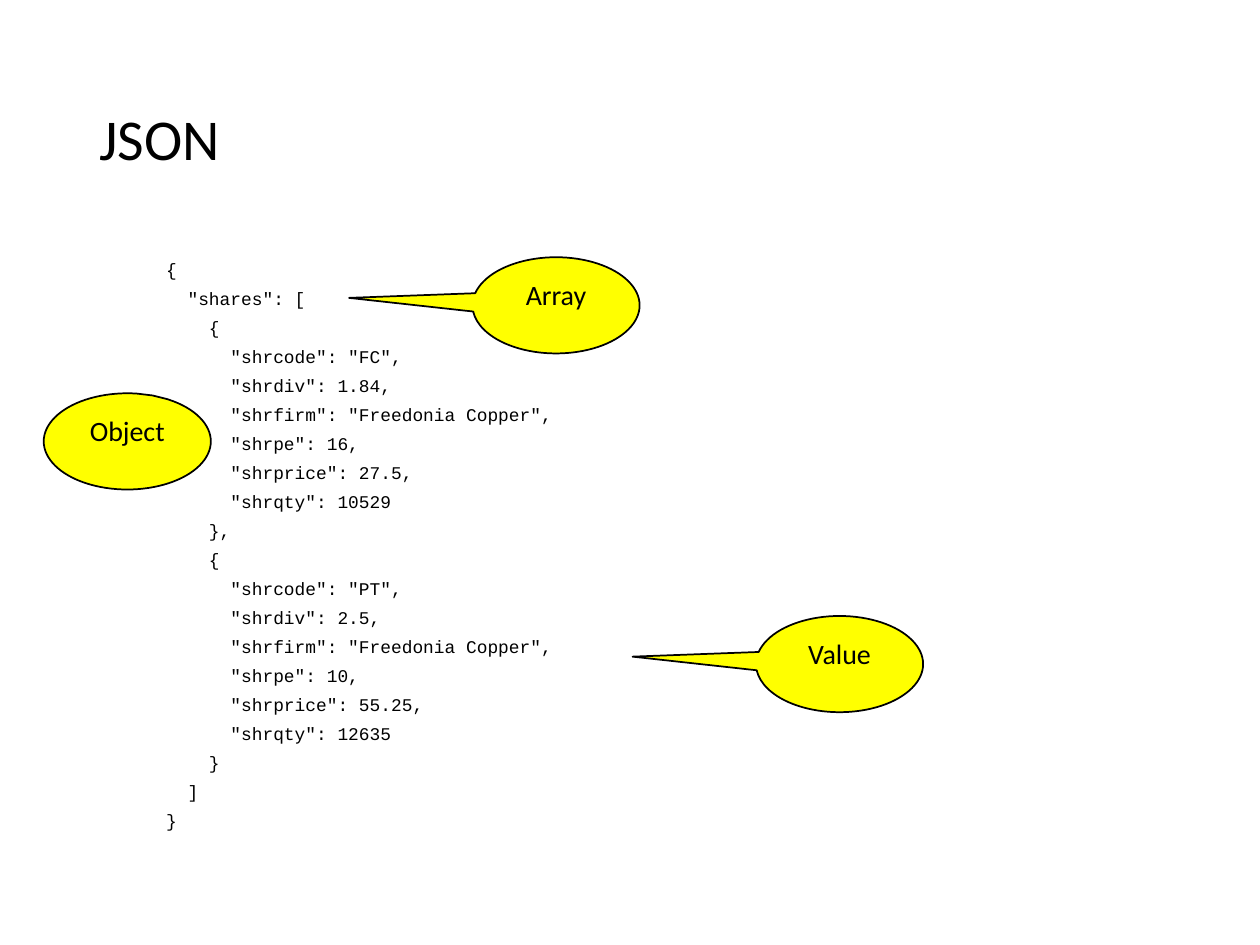
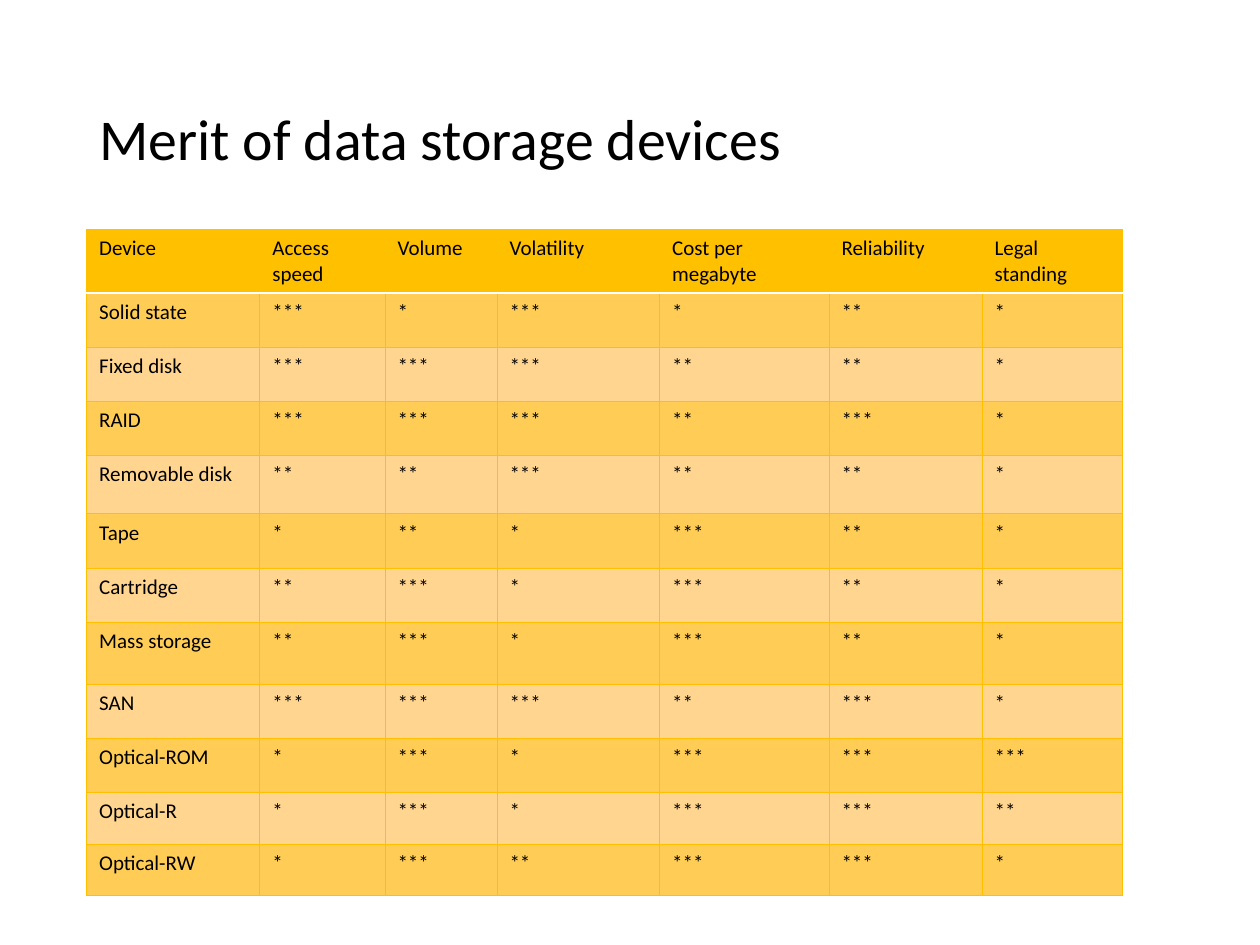
from lxml import etree
from pptx import Presentation
from pptx.dml.color import RGBColor
from pptx.enum.shapes import MSO_SHAPE
from pptx.enum.text import MSO_ANCHOR, MSO_AUTO_SIZE, PP_ALIGN
from pptx.oxml.ns import qn
from pptx.util import Pt

CALLOUT = MSO_SHAPE.OVAL_CALLOUT
TOP, MIDDLE = MSO_ANCHOR.TOP, MSO_ANCHOR.MIDDLE
LEFT, CENTER = PP_ALIGN.LEFT, PP_ALIGN.CENTER
NO_AUTOFIT = MSO_AUTO_SIZE.NONE

BLACK = RGBColor(0x00, 0x00, 0x00)
WHITE = RGBColor(0xFF, 0xFF, 0xFF)
YELLOW = RGBColor(0xFF, 0xFF, 0x00)
GOLD = RGBColor(0xFF, 0xC0, 0x00)
BAND_DARK = RGBColor(0xFF, 0xCD, 0x56)
BAND_LIGHT = RGBColor(0xFF, 0xD5, 0x8F)

TITLE_FORMAT = {"alignment": LEFT, "line_spacing": 0.9, "space_before": Pt(0)}
CODE_FORMAT = {"alignment": LEFT, "line_spacing": 0.74, "space_before": Pt(7.5)}


def write(paragraph, text, size, font="Calibri", **formats):
    run = paragraph.add_run()
    run.text = text
    run.font.name = font
    run.font.size = Pt(size)
    run.font.bold = False
    run.font.color.rgb = BLACK
    for name, value in formats.items():
        setattr(paragraph, name, value)


def add_titled_slide(layout, text):
    slide = prs.slides.add_slide(prs.slide_layouts[layout])
    title = slide.shapes.title
    title.left, title.top, title.width, title.height = Pt(49.5), Pt(28.75), Pt(621), Pt(104.5)
    title.text_frame.auto_size = NO_AUTOFIT
    title.text_frame.vertical_anchor = MIDDLE
    write(title.text_frame.paragraphs[0], text, 33, **TITLE_FORMAT)
    return slide


prs = Presentation()
prs.slide_width, prs.slide_height = Pt(720), Pt(540)

# Slide 1: JSON listing
json_slide = add_titled_slide(1, "JSON")
JSON_TEXT = """{
  "shares": [
    {
      "shrcode": "FC",
      "shrdiv": 1.84,
      "shrfirm": "Freedonia Copper",
      "shrpe": 16,
      "shrprice": 27.5,
      "shrqty": 10529
    },
    {
      "shrcode": "PT",
      "shrdiv": 2.5,
      "shrfirm": "Freedonia Copper",
      "shrpe": 10,
      "shrprice": 55.25,
      "shrqty": 12635
    }
  ]
}"""
listing = json_slide.placeholders[1]
listing.left, listing.top, listing.width, listing.height = Pt(87.75), Pt(147), Pt(621), Pt(343)
listing.text_frame.auto_size = NO_AUTOFIT
for i, code_line in enumerate(JSON_TEXT.split("\n")):
    paragraph = listing.text_frame.add_paragraph() if i else listing.text_frame.paragraphs[0]
    write(paragraph, code_line, 10.2, "Courier New", **CODE_FORMAT)
    properties = paragraph._p.get_or_add_pPr()
    properties.set("marL", "0")
    properties.set("indent", "0")
    etree.SubElement(properties, qn("a:buNone"))

# Callouts: label, left, top, pointer tip relative to the centre
for label, left, top, tip in [
    ("Array", 270, 147, (-1.239, -0.077)),
    ("Object", 25, 224.75, (0.151, -0.477)),
    ("Value", 432, 352, (-1.239, -0.077)),
]:
    callout = json_slide.shapes.add_shape(CALLOUT, Pt(left), Pt(top), Pt(95.5), Pt(55))
    callout.adjustments[0], callout.adjustments[1] = tip
    callout.shadow.inherit = False
    callout.fill.solid()
    callout.fill.fore_color.rgb = YELLOW
    callout.line.color.rgb = BLACK
    callout.line.width = Pt(1)
    callout.text_frame.vertical_anchor = TOP
    write(callout.text_frame.paragraphs[0], label, 16, alignment=CENTER)

# Slide 2: storage devices, merits given as a number of stars
merit_slide = add_titled_slide(5, "Merit of data storage devices")
HEADINGS = ["Device", "Access speed", "Volume", "Volatility", "Cost per megabyte",
            "Reliability", "Legal standing"]
MERITS = [
    ("Solid state", 3, 1, 3, 1, 2, 1),
    ("Fixed disk", 3, 3, 3, 2, 2, 1),
    ("RAID", 3, 3, 3, 2, 3, 1),
    ("Removable disk", 2, 2, 3, 2, 2, 1),
    ("Tape", 1, 2, 1, 3, 2, 1),
    ("Cartridge", 2, 3, 1, 3, 2, 1),
    ("Mass storage", 2, 3, 1, 3, 2, 1),
    ("SAN", 3, 3, 3, 2, 3, 1),
    ("Optical-ROM", 1, 3, 1, 3, 3, 3),
    ("Optical-R", 1, 3, 1, 3, 3, 2),
    ("Optical-RW", 1, 3, 2, 3, 3, 1),
]
COLUMN_WIDTHS = [99, 71.5, 64, 93, 96.75, 87.5, 80.5]
ROW_HEIGHTS = [36, 31, 31, 31, 33.25, 31, 31, 35.25, 31, 31, 29.5, 29.5]
rows = [HEADINGS] + [[device] + ["*" * stars for stars in merits] for device, *merits in MERITS]

devices = merit_slide.shapes.add_table(
    len(rows), len(HEADINGS), Pt(49.5), Pt(131),
    Pt(sum(COLUMN_WIDTHS)), Pt(sum(ROW_HEIGHTS))).table
for column, width in zip(devices.columns, COLUMN_WIDTHS):
    column.width = Pt(width)
for row, height in zip(devices.rows, ROW_HEIGHTS):
    row.height = Pt(height)

for r, texts in enumerate(rows):
    for c, text in enumerate(texts):
        cell = devices.cell(r, c)
        write(cell.text_frame.paragraphs[0], text, 12, space_before=Pt(8.5 if r < 3 else 5))
        cell.fill.solid()
        cell.fill.fore_color.rgb = GOLD if r == 0 else BAND_DARK if r % 2 else BAND_LIGHT

        # Gold grid, with a white rule under the headings
        cell_properties = cell._tc.get_or_add_tcPr()
        for position, side in enumerate(["lnL", "lnR", "lnT", "lnB"]):
            white_rule = (r, side) in [(0, "lnB"), (1, "lnT")]
            border = etree.Element(qn(f"a:{side}"), w=str(Pt(1 if white_rule else 0.5)))
            fill = etree.SubElement(border, qn("a:solidFill"))
            etree.SubElement(fill, qn("a:srgbClr"), val=str(WHITE if white_rule else GOLD))
            cell_properties.insert(position, border)

prs.save("out.pptx")
